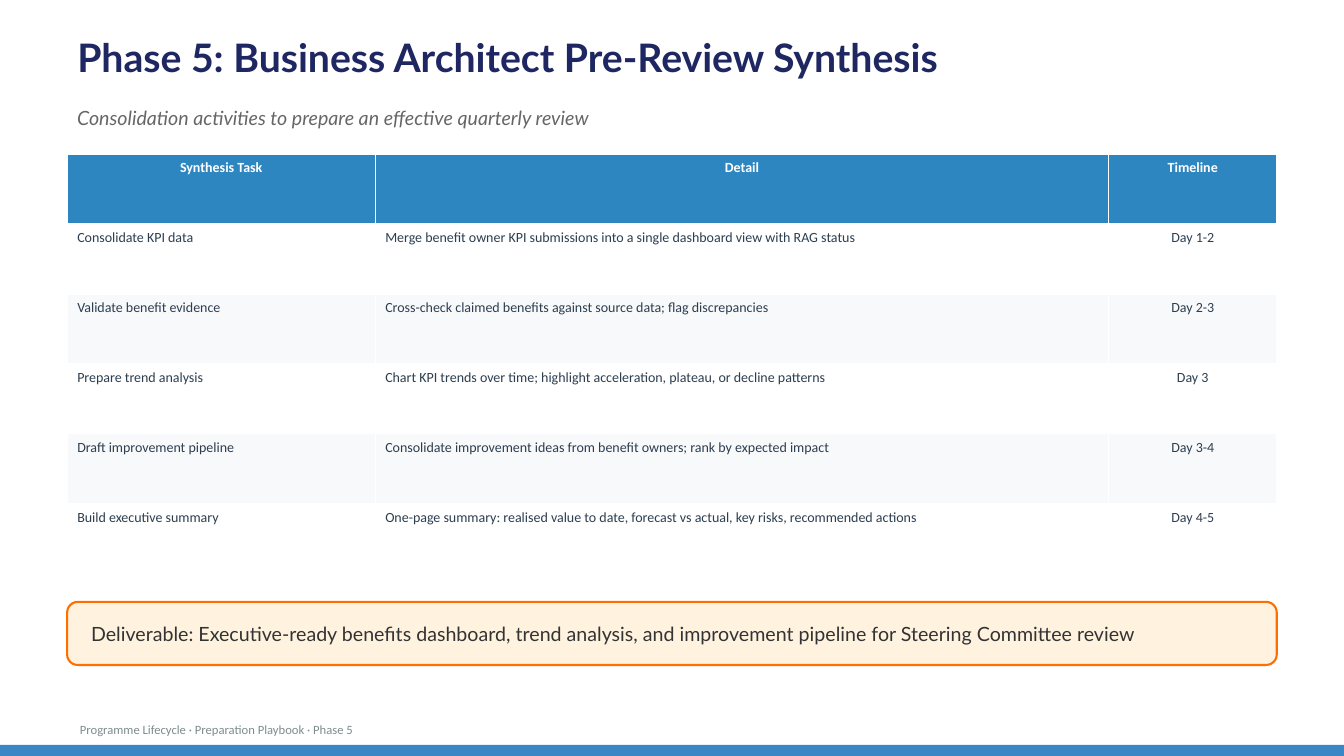
"""Builds the Phase 5 pre-review synthesis slide on a grid of 96 columns and 54 rows."""
from pptx import Presentation
from pptx.dml.color import RGBColor
from pptx.enum.shapes import MSO_SHAPE
from pptx.enum.text import MSO_ANCHOR, MSO_AUTO_SIZE, PP_ALIGN
from pptx.util import Pt

RECTANGLE = MSO_SHAPE.RECTANGLE
ROUNDED = MSO_SHAPE.ROUNDED_RECTANGLE
TOP, MIDDLE = MSO_ANCHOR.TOP, MSO_ANCHOR.MIDDLE
LEFT, CENTER = PP_ALIGN.LEFT, PP_ALIGN.CENTER
NO_AUTOFIT = MSO_AUTO_SIZE.NONE

COLUMNS, ROWS, CELL = 96, 54, 10
MARGIN, CONTENT = 4.8, 86.4
TITLE_ONLY = 5
HEADING_FONT, DETAIL_FONT = "Lato", "Calibri"

COLORS = {
    "white": "FFFFFF",
    "navy": "1E2761",
    "gray": "666666",
    "header": "2E86C1",
    "band": "F8F9FA",
    "slate": "2C3E50",
    "cream": "FFF3E0",
    "orange": "FF6F00",
    "charcoal": "333333",
    "footer": "7F8C8D",
    "bar": "3A87C6",
}

TASK_WIDTHS = [22, 52.4, 12]
TASK_ROW_HEIGHT = 5
TASKS = [
    ("Synthesis Task", "Detail", "Timeline"),
    ("Consolidate KPI data",
     "Merge benefit owner KPI submissions into a single dashboard view with RAG status", "Day 1-2"),
    ("Validate benefit evidence",
     "Cross-check claimed benefits against source data; flag discrepancies", "Day 2-3"),
    ("Prepare trend analysis",
     "Chart KPI trends over time; highlight acceleration, plateau, or decline patterns", "Day 3"),
    ("Draft improvement pipeline",
     "Consolidate improvement ideas from benefit owners; rank by expected impact", "Day 3-4"),
    ("Build executive summary",
     "One-page summary: realised value to date, forecast vs actual, key risks, recommended actions",
     "Day 4-5"),
]


class SlideBuilder:
    """Holds the grid, the colours and the current slide."""

    def __init__(self, presentation):
        presentation.slide_width = Pt(COLUMNS * CELL)
        presentation.slide_height = Pt(ROWS * CELL)
        self.slide = presentation.slides.add_slide(presentation.slide_layouts[TITLE_ONLY])
        self.fill(self.slide.background, "white")

    def grid(self, *lengths):
        return [Pt(length * CELL) for length in lengths]

    def color(self, name):
        return RGBColor.from_string(COLORS[name])

    def fill(self, target, name):
        target.fill.solid()
        target.fill.fore_color.rgb = self.color(name)

    def add_run(self, frame, text, size, color, font=HEADING_FONT, bold=False, italic=False, align=LEFT):
        paragraph = frame.paragraphs[0]
        paragraph.alignment = align
        run = paragraph.add_run()
        run.text = text
        run.font.name = font
        run.font.size = Pt(size)
        run.font.bold = bold
        run.font.italic = italic
        run.font.color.rgb = self.color(color)

    def title(self, area, text, size, color):
        title = self.slide.shapes.title
        title.left, title.top, title.width, title.height = self.grid(*area)
        frame = title.text_frame
        frame.word_wrap = True
        frame.auto_size = NO_AUTOFIT
        frame.vertical_anchor = TOP
        self.add_run(frame, text, size, color, bold=True)

    def text(self, area, text, size, color, anchor=TOP, **style):
        frame = self.slide.shapes.add_textbox(*self.grid(*area)).text_frame
        frame.word_wrap = True
        frame.vertical_anchor = anchor
        self.add_run(frame, text, size, color, **style)

    def panel(self, kind, area, fill, line=None):
        shape = self.slide.shapes.add_shape(kind, *self.grid(*area))
        shape.shadow.inherit = False
        self.fill(shape, fill)
        if line:
            shape.line.color.rgb = self.color(line)
            shape.line.width = Pt(1.5)
        else:
            shape.line.fill.background()

    def table(self, left, top, widths, row_height, rows):
        area = self.grid(left, top, sum(widths), row_height * len(rows))
        table = self.slide.shapes.add_table(len(rows), len(widths), *area).table
        for column, width in zip(table.columns, self.grid(*widths)):
            column.width = width
        for row_index, values in enumerate(rows):
            header = row_index == 0
            fill = "header" if header else "white" if row_index % 2 else "band"
            for column_index, value in enumerate(values):
                cell = table.cell(row_index, column_index)
                self.fill(cell, fill)
                centered = header or column_index == len(widths) - 1
                self.add_run(cell.text_frame, value, 10, "white" if header else "slate",
                             font=DETAIL_FONT, bold=header, align=CENTER if centered else LEFT)


def main():
    presentation = Presentation()
    builder = SlideBuilder(presentation)
    builder.title((MARGIN, 2, CONTENT, 5),
                  "Phase 5: Business Architect Pre-Review Synthesis", 28, "navy")
    builder.text((MARGIN, 7.2, CONTENT, 2.8),
                 "Consolidation activities to prepare an effective quarterly review",
                 14, "gray", italic=True)
    builder.table(MARGIN, 11, TASK_WIDTHS, TASK_ROW_HEIGHT, TASKS)
    builder.panel(ROUNDED, (MARGIN, 43, CONTENT, 4.5), "cream", "orange")
    builder.text((MARGIN + 1, 43.5, CONTENT - 2, 3.5),
                 "Deliverable: Executive-ready benefits dashboard, trend analysis, "
                 "and improvement pipeline for Steering Committee review",
                 14, "charcoal", anchor=MIDDLE)
    builder.text((5, 51.2, 50, 2), "Programme Lifecycle · Preparation Playbook · Phase 5",
                 9, "footer", font=DETAIL_FONT)
    builder.panel(RECTANGLE, (0, 53.2, COLUMNS, 0.8), "bar")
    presentation.save("out.pptx")


if __name__ == "__main__":
    main()
